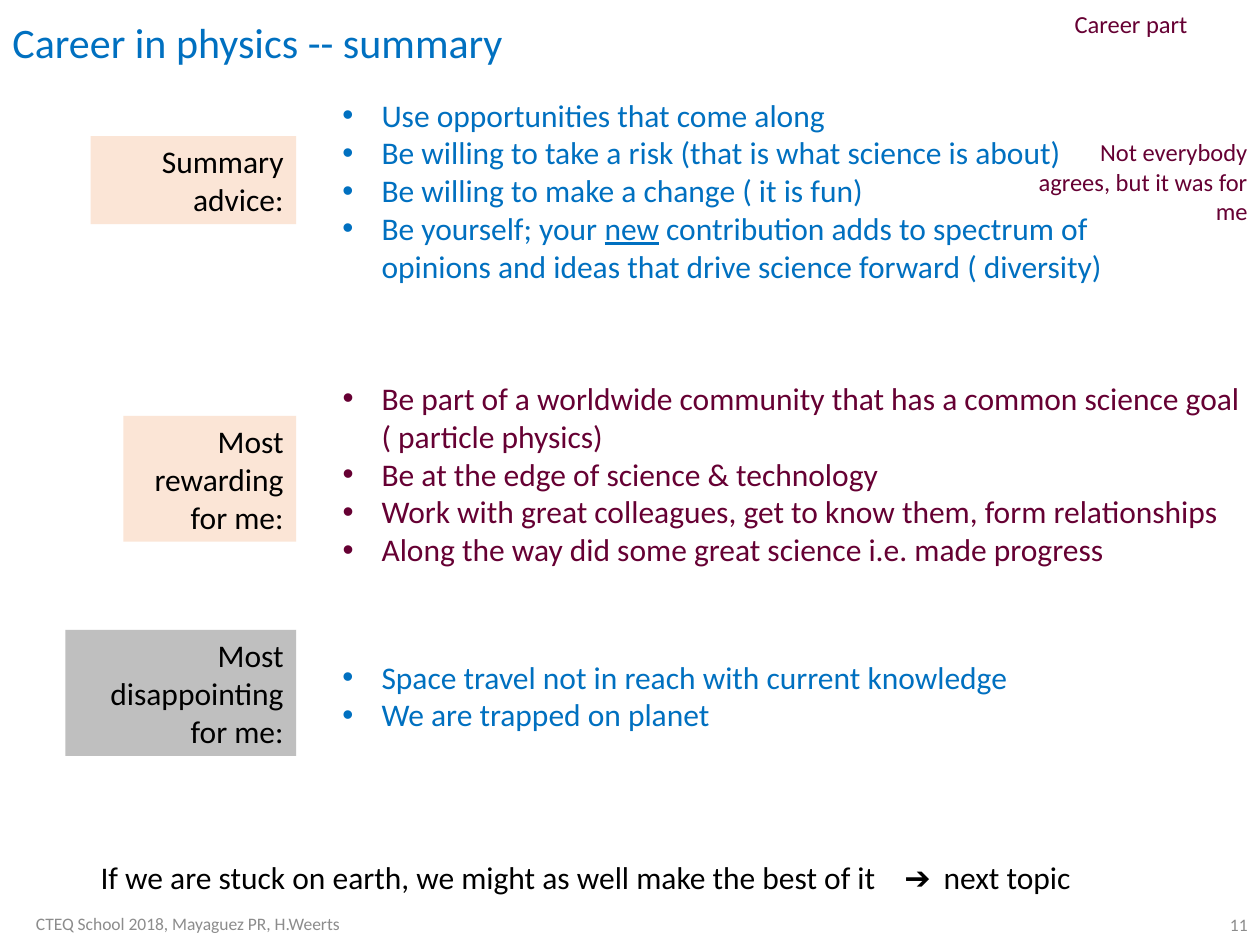
"""Build the closing summary slide of a talk on a career in physics."""
from lxml.etree import SubElement
from pptx import Presentation
from pptx.dml.color import RGBColor
from pptx.enum.shapes import MSO_SHAPE as Shape
from pptx.enum.text import MSO_ANCHOR as Anchor, PP_ALIGN as Align
from pptx.oxml.ns import qn
from pptx.util import Inches, Pt

BLUE = RGBColor(0x00, 0x70, 0xC0)
PLUM = RGBColor(0x66, 0x00, 0x33)
BLACK = RGBColor(0x00, 0x00, 0x00)
GRAY = RGBColor(0x8C, 0x8C, 0x8C)
PEACH = RGBColor(0xFB, 0xE5, 0xD6)
SILVER = RGBColor(0xBF, 0xBF, 0xBF)

WIDTH, HEIGHT = 10, 7.5
LABEL_RIGHT, BULLET_LEFT = 2.35, 2.62
INDENT = 0.31
LINE, PADDING = 0.3, 0.1

SECTIONS = [
    {"label": "Summary advice:", "label_top": 1.08, "label_width": 1.63, "label_lines": 2,
     "fill": PEACH, "top": 0.71, "width": 6.67, "lines": 5, "color": BLUE,
     "bullets": [
         ["Use opportunities that come along"],
         ["Be willing to take a risk (that is what science is about)"],
         ["Be willing to make a change ( it is fun)"],
         ["Be yourself; your ", ("new", {"underline": True}),
          " contribution adds to spectrum of opinions and ideas"
          " that drive science forward ( diversity)"]]},
    {"label": "Most rewarding for me:", "label_top": 3.3, "label_width": 1.37, "label_lines": 3,
     "fill": PEACH, "top": 2.96, "width": 7.38, "lines": 5, "color": PLUM,
     "bullets": [
         ["Be part of a worldwide community that has a common science goal ( particle physics)"],
         ["Be at the edge of science & technology"],
         ["Work with great colleagues, get to know them, form relationships"],
         ["Along the way did some great science i.e. made progress"]]},
    {"label": "Most disappointing for me:", "label_top": 5, "label_width": 1.83, "label_lines": 3,
     "fill": SILVER, "top": 5.17, "width": 6.67, "lines": 2, "color": BLUE,
     "bullets": [
         ["Space travel not in reach with current knowledge"],
         ["We are trapped on planet"]]},
]

TEXTS = [
    ("Career in physics -- summary", (0, 0, 8.62, 0.71),
     {"size": 24, "color": BLUE, "anchor": Anchor.MIDDLE, "line_spacing": 0.9}),
    ("Career part", (8.43, 0.02, 1.57, 0.34), {"size": 14, "color": PLUM}),
    ("Not everybody agrees, but it was for me", (8.1, 1.04, 1.9, 0.81),
     {"size": 14, "color": PLUM, "alignment": Align.RIGHT}),
    ("If we are stuck on earth, we might as well make the best of it\t➔\tnext topic",
     (0.7, 6.76, 8.88, 0.4), {"tabs": (6.38, 6.69)}),
    ("CTEQ School 2018, Mayaguez PR, H.Weerts", (0, 7.16, 2.98, 0.34),
     {"size": 10, "color": GRAY, "anchor": Anchor.MIDDLE, "alignment": Align.CENTER}),
    ("11", (9.31, 7.18, 0.69, 0.32),
     {"size": 10, "color": GRAY, "anchor": Anchor.MIDDLE, "alignment": Align.RIGHT}),
]


def add_spans(para, pieces, size, color):
    """Write plain or specially formatted pieces as runs."""
    for piece in pieces:
        words, extra = piece if isinstance(piece, tuple) else (piece, {})
        span = para.add_run()
        span.text = words
        span.font.color.rgb = color
        for name, value in {"name": "Calibri", "size": Pt(size), **extra}.items():
            setattr(span.font, name, value)


def set_bullet(para):
    """Give the paragraph a hanging round bullet."""
    props = para._p.get_or_add_pPr()
    props.set("marL", str(Inches(INDENT)))
    props.set("indent", str(-Inches(INDENT)))
    SubElement(props, qn("a:buFont"), typeface="Arial")
    SubElement(props, qn("a:buChar"), char="•")


def set_tabs(para, stops):
    """Add left tab stops, measured in inches."""
    tab_list = SubElement(para._p.get_or_add_pPr(), qn("a:tabLst"))
    for stop in stops:
        SubElement(tab_list, qn("a:tab"), pos=str(Inches(stop)), algn="l")


def add_box(page, place, paragraphs, size=18, color=BLACK, fill=None, bulleted=False,
            anchor=Anchor.TOP, tabs=(), **formats):
    """Add a text box, or a filled rectangle, holding the paragraphs."""
    bounds = [Inches(length) for length in place]
    if fill is None:
        box = page.shapes.add_textbox(*bounds)
    else:
        box = page.shapes.add_shape(Shape.RECTANGLE, *bounds)
        box.shadow.inherit = False
        box.fill.solid()
        box.fill.fore_color.rgb = fill
        box.line.fill.background()
    frame = box.text_frame
    frame.word_wrap = True
    frame.vertical_anchor = anchor
    for index, pieces in enumerate(paragraphs):
        para = frame.add_paragraph() if index else frame.paragraphs[0]
        for name, value in {"alignment": Align.LEFT, **formats}.items():
            setattr(para, name, value)
        if bulleted:
            set_bullet(para)
        if tabs:
            set_tabs(para, tabs)
        add_spans(para, pieces, size, color)


def main():
    """Create and save the deck."""
    deck = Presentation()
    deck.slide_width, deck.slide_height = Inches(WIDTH), Inches(HEIGHT)
    page = deck.slides.add_slide(deck.slide_layouts[6])
    for words, place, formats in TEXTS:
        add_box(page, place, [[words]], **formats)
    for part in SECTIONS:
        label_place = (LABEL_RIGHT - part["label_width"], part["label_top"],
                       part["label_width"], part["label_lines"] * LINE + PADDING)
        add_box(page, label_place, [[part["label"]]], fill=part["fill"], alignment=Align.RIGHT)
        bullet_place = (BULLET_LEFT, part["top"], part["width"], part["lines"] * LINE + PADDING)
        add_box(page, bullet_place, part["bullets"], color=part["color"], bulleted=True)
    deck.save("out.pptx")


if __name__ == "__main__":
    main()
